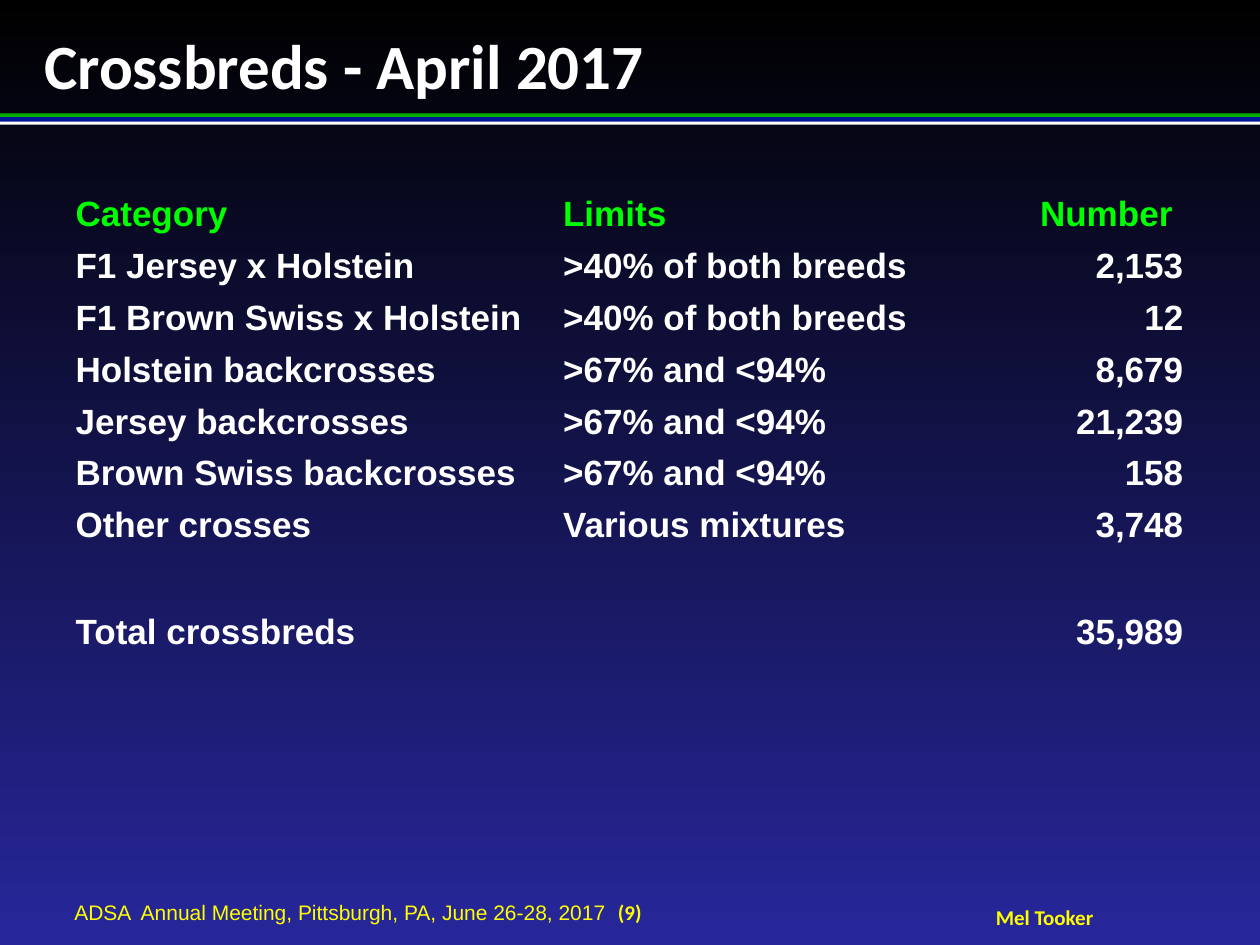
from pptx import Presentation
from pptx.dml.color import RGBColor
from pptx.enum.shapes import MSO_SHAPE
from pptx.enum.text import MSO_ANCHOR, PP_ALIGN
from pptx.util import Pt

LEFT, CENTER, RIGHT = PP_ALIGN.LEFT, PP_ALIGN.CENTER, PP_ALIGN.RIGHT
TOP, MIDDLE = MSO_ANCHOR.TOP, MSO_ANCHOR.MIDDLE
RECTANGLE = MSO_SHAPE.RECTANGLE
PLAIN_TABLE_STYLE = "{2D5ABB26-0587-4C30-8999-92F81FD0307C}"

WHITE, YELLOW, GREEN = "FFFFFF", "FFFF00", "00FF00"

HEADER = ("Category", "Limits", "Number")
ROWS = [
    ("F1 Jersey x Holstein", ">40% of both breeds", "2,153"),
    ("F1 Brown Swiss x Holstein", ">40% of both breeds", "12"),
    ("Holstein backcrosses", ">67% and <94%", "8,679"),
    ("Jersey backcrosses", ">67% and <94%", "21,239"),
    ("Brown Swiss backcrosses", ">67% and <94%", "158"),
    ("Other crosses", "Various mixtures", "3,748"),
    ("", "", ""),
    ("Total crossbreds", "", "35,989"),
]


def color(value):
    return RGBColor.from_string(value)


def add_run(paragraph, text, size, font_name, font_color, bold=False):
    run = paragraph.add_run()
    run.text = text
    run.font.size = Pt(size)
    run.font.name = font_name
    run.font.bold = bold
    run.font.color.rgb = color(font_color)


def prepare_frame(frame, anchor, wrap=True):
    frame.margin_left = frame.margin_right = 0
    frame.margin_top = frame.margin_bottom = 0
    frame.vertical_anchor = anchor
    frame.word_wrap = wrap


def paint_background(slide):
    fill = slide.background.fill
    fill.gradient()
    fill.gradient_angle = 270
    for stop, position, value in zip(fill.gradient_stops, (0, 1), ("000000", "27279B")):
        stop.position = position
        stop.color.rgb = color(value)


def add_title(slide, left, top, width, height):
    title = slide.shapes.title
    title.left, title.top, title.width, title.height = map(Pt, (left, top, width, height))
    prepare_frame(title.text_frame, TOP)
    paragraph = title.text_frame.paragraphs[0]
    paragraph.alignment = LEFT
    add_run(paragraph, "Crossbreds - April 2017", 36, "Calibri", WHITE, True)


def add_stripes(slide, left, top, width):
    # Offset from the top, height, colour
    for offset, height, value in ((0, 2.2, "01AF00"), (4.3, 2.2, WHITE), (2.2, 2.6, "001799")):
        stripe = slide.shapes.add_shape(
            RECTANGLE, Pt(left), Pt(top + offset), Pt(width), Pt(height))
        stripe.shadow.inherit = False
        stripe.fill.solid()
        stripe.fill.fore_color.rgb = color(value)
        stripe.line.fill.background()


def add_breed_table(slide, left, top, width, height):
    rows = [HEADER, *ROWS]
    frame = slide.shapes.add_table(
        len(rows), len(HEADER), Pt(left), Pt(top), Pt(width), Pt(height))
    table = frame.table
    table.first_row = table.horz_banding = False
    table._tbl.tblPr[0].text = PLAIN_TABLE_STYLE

    for column, column_width in zip(table.columns, (278.6, 266.4, 102.4)):
        column.width = Pt(column_width)

    for row_index, values in enumerate(rows):
        is_header = row_index == 0
        table.rows[row_index].height = Pt(29.6 if any(values) else 31.6)
        alignments = (LEFT, LEFT, CENTER if is_header else RIGHT)
        for column_index, (text, alignment) in enumerate(zip(values, alignments)):
            cell = table.cell(row_index, column_index)
            cell.fill.background()
            cell.margin_bottom = Pt(2.5)
            if text:
                paragraph = cell.text_frame.paragraphs[0]
                paragraph.alignment = alignment
                add_run(paragraph, text, 20, "Arial", GREEN if is_header else WHITE, True)


def add_footer_text(slide, left, top, width, height, alignment, runs, wrap=True):
    box = slide.shapes.add_textbox(Pt(left), Pt(top), Pt(width), Pt(height))
    prepare_frame(box.text_frame, MIDDLE, wrap)
    paragraph = box.text_frame.paragraphs[0]
    paragraph.alignment = alignment
    for text, font_name, bold in runs:
        add_run(paragraph, text, 12, font_name, YELLOW, bold)


def main():
    presentation = Presentation()
    presentation.slide_width, presentation.slide_height = Pt(720), Pt(540)
    slide = presentation.slides.add_slide(presentation.slide_layouts[5])

    paint_background(slide)
    # Heading
    add_stripes(slide, 0, 64.8, 720)
    add_title(slide, 25.2, 15.1, 670.3, 43.9)
    # Body
    add_breed_table(slide, 36, 108, 647.4, 268.4)
    # Footer
    add_footer_text(slide, 42.5, 514.1, 489.6, 14.4, LEFT, [
        ("ADSA  Annual Meeting, Pittsburgh, PA, June 26-28, 2017  ", "Arial", False),
        ("(9)", "Calibri", True),
    ])
    add_footer_text(slide, 565.2, 517, 63.4, 14.4, CENTER,
                    [("Mel Tooker", "Calibri", True)], wrap=False)

    presentation.save("out.pptx")


if __name__ == "__main__":
    main()
